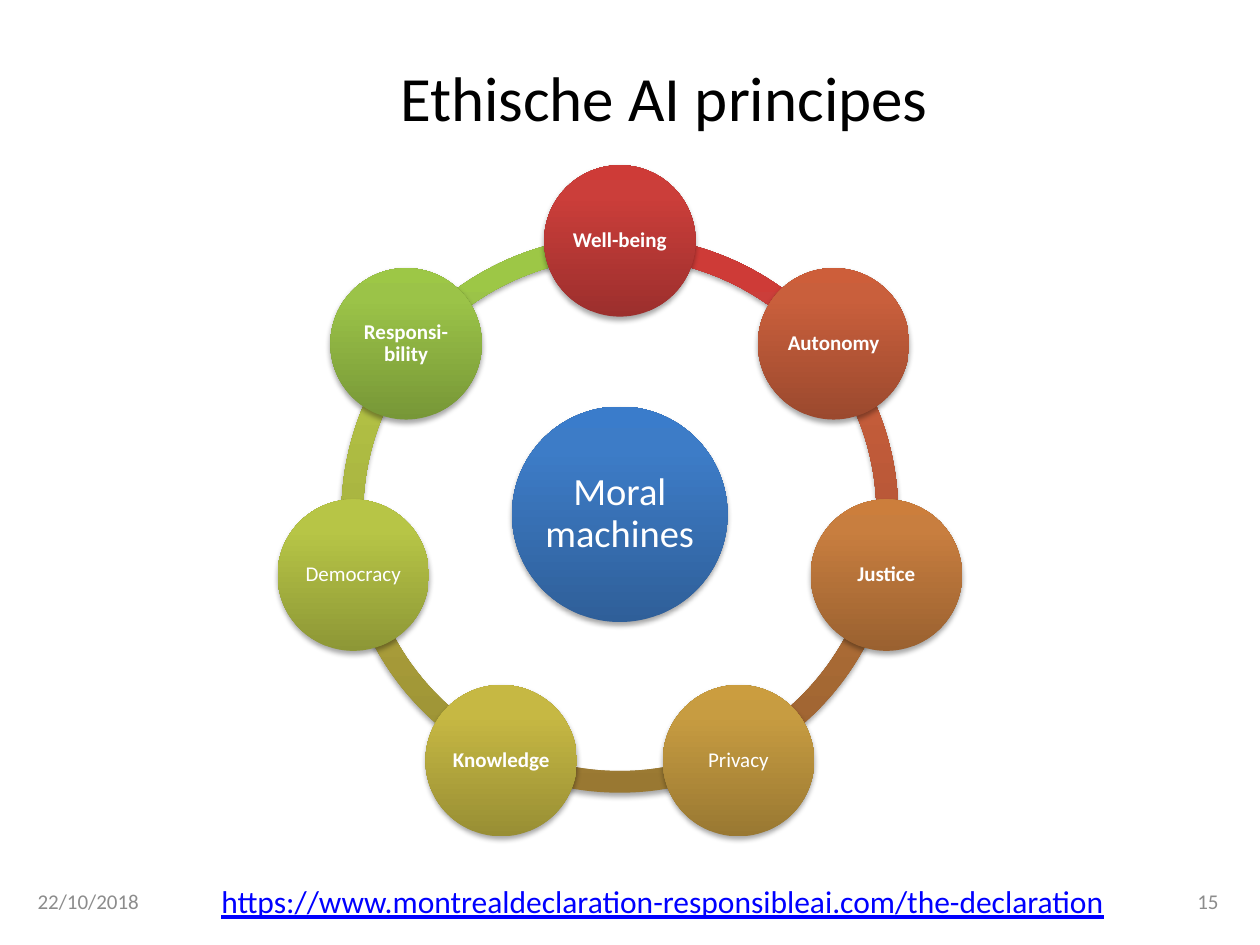
from copy import deepcopy
from dataclasses import dataclass
from math import cos, radians, sin

from lxml import etree
from pptx import Presentation
from pptx.dml.color import RGBColor
from pptx.enum.shapes import MSO_SHAPE
from pptx.enum.text import MSO_ANCHOR, PP_ALIGN
from pptx.oxml.ns import qn
from pptx.util import Pt

OVAL, ARC = MSO_SHAPE.OVAL, MSO_SHAPE.BLOCK_ARC
LEFT, CENTER, RIGHT = PP_ALIGN.LEFT, PP_ALIGN.CENTER, PP_ALIGN.RIGHT
MIDDLE = MSO_ANCHOR.MIDDLE
TITLE_ONLY = 5


@dataclass(frozen=True)
class Theme:
    font: str = "Calibri"
    ink: str = "000000"
    muted: str = "8C8C8C"
    link: str = "0000FF"
    white: str = "FFFFFF"
    title_size: int = 36
    hub_size: int = 22
    link_size: int = 18
    small_size: int = 12
    # Each gradient runs from bottom to top
    stops: tuple = (0, 0.8, 1)
    hub: tuple = ("2F5F99", "3D7CC7", "3A7CCB")


THEME = Theme()

# Label, bold, gradient; clockwise from the top
PRINCIPLES = [
    ("Well-being", True, ("9C2F2D", "CB3E3A", "CE3B37")),
    ("Autonomy", True, ("9B492E", "C95F3C", "CD5E3A")),
    ("Justice", True, ("9A6130", "C87E3F", "CC7E3C")),
    ("Privacy", False, ("997832", "C79C41", "CB9D3F")),
    ("Knowledge", True, ("988E34", "C6B843", "C9BB41")),
    ("Democracy", False, ("8D9736", "B7C546", "B9C844")),
    ("Responsi-bility", True, ("779737", "9BC348", "9DC746")),
]


def write(tf, text, size, color, align=LEFT, bold=False, underline=False):
    tf.word_wrap = True
    tf.vertical_anchor = MIDDLE
    tf.text = text
    p = tf.paragraphs[0]
    p.alignment = align
    font = p.runs[0].font
    font.name, font.size = THEME.font, Pt(size)
    font.bold, font.underline = bold, underline
    font.color.rgb = RGBColor.from_string(color)
    return p


def add_shadow(sp):
    sp.shadow.inherit = False
    effects = sp._element.spPr.find(qn("a:effectLst"))
    shadow = etree.SubElement(effects, qn("a:outerShdw"), blurRad=str(Pt(3.1)),
                              dist=str(Pt(1.8)), dir="5400000", rotWithShape="0")
    color = etree.SubElement(shadow, qn("a:srgbClr"), val="000000")
    etree.SubElement(color, qn("a:alpha"), val="35000")


def add_glossy(s, kind, cx, cy, size, colors):
    """Add a square-boxed shape centred on (cx, cy) with a gradient and shadow."""
    sp = s.shapes.add_shape(kind, Pt(cx - size / 2), Pt(cy - size / 2), Pt(size), Pt(size))
    sp.line.fill.background()
    sp.fill.gradient()
    sp.fill.gradient_angle = 90
    stop_list = sp._element.spPr.find(".//" + qn("a:gsLst"))
    stop_list.append(deepcopy(stop_list[-1]))
    for stop, position, color in zip(sp.fill.gradient_stops, THEME.stops, colors):
        stop.position = position
        stop.color.rgb = RGBColor.from_string(color)
    add_shadow(sp)
    return sp


def add_disc(s, cx, cy, size, colors, text, text_size, bold=False):
    tf = add_glossy(s, OVAL, cx, cy, size, colors).text_frame
    tf.margin_left = tf.margin_right = 0
    tf.margin_top = tf.margin_bottom = Pt(size / 60)
    write(tf, text, text_size, THEME.white, CENTER, bold).line_spacing = 0.9


def add_wheel(s, left, top, size):
    """Place the hub, ring and discs in a square box around the ring."""
    cx, cy = left + size / 2, top + size / 2
    orbit, disc, hub = 0.491 * size, 0.272 * size, 0.387 * size
    step = 360 / len(PRINCIPLES)
    angles = [270 + i * step for i in range(len(PRINCIPLES))]

    for angle, (_, _, colors) in reversed(list(zip(angles, PRINCIPLES))):
        arc = add_glossy(s, ARC, cx, cy, size, colors)
        # Angles are stored in 60000ths of a degree, adjustments in 100000ths
        arc.adjustments[0] = angle % 360 * 0.6
        arc.adjustments[1] = (angle + step) % 360 * 0.6
        arc.adjustments[2] = 0.039

    add_disc(s, cx, cy, hub, THEME.hub, "Moral machines", THEME.hub_size)
    for angle, (label, bold, colors) in zip(angles, PRINCIPLES):
        x = cx + orbit * cos(radians(angle))
        y = cy + orbit * sin(radians(angle))
        add_disc(s, x, y, disc, colors, label, THEME.small_size, bold)


def add_title(s, left, top, width, height):
    sp = s.shapes.title
    sp.left, sp.top, sp.width, sp.height = map(Pt, (left, top, width, height))
    write(sp.text_frame, "Ethische AI principes", THEME.title_size, THEME.ink, CENTER)


def add_footer(s, left, top, width, height):
    side = 168
    link_left = left + 105
    parts = [
        (left, side, "22/10/2018", THEME.small_size, THEME.muted, LEFT, False),
        (left + width - side, side, "15", THEME.small_size, THEME.muted, RIGHT, False),
        (link_left, width - 105,
         "https://www.montrealdeclaration-responsibleai.com/the-declaration",
         THEME.link_size, THEME.link, LEFT, True),
    ]
    for x, w, text, size, color, align, underline in parts:
        tf = s.shapes.add_textbox(Pt(x), Pt(top), Pt(w), Pt(height)).text_frame
        write(tf, text, size, color, align, underline=underline)


def main():
    prs = Presentation()
    prs.slide_width, prs.slide_height = Pt(720), Pt(540)
    s = prs.slides.add_slide(prs.slide_layouts[TITLE_ONLY])
    add_title(s, 115, 21.6, 529, 67)
    add_wheel(s, 195.1, 134.8, 318.2)
    add_footer(s, 14.4, 500.5, 689, 28.8)
    prs.save("out.pptx")


if __name__ == "__main__":
    main()
